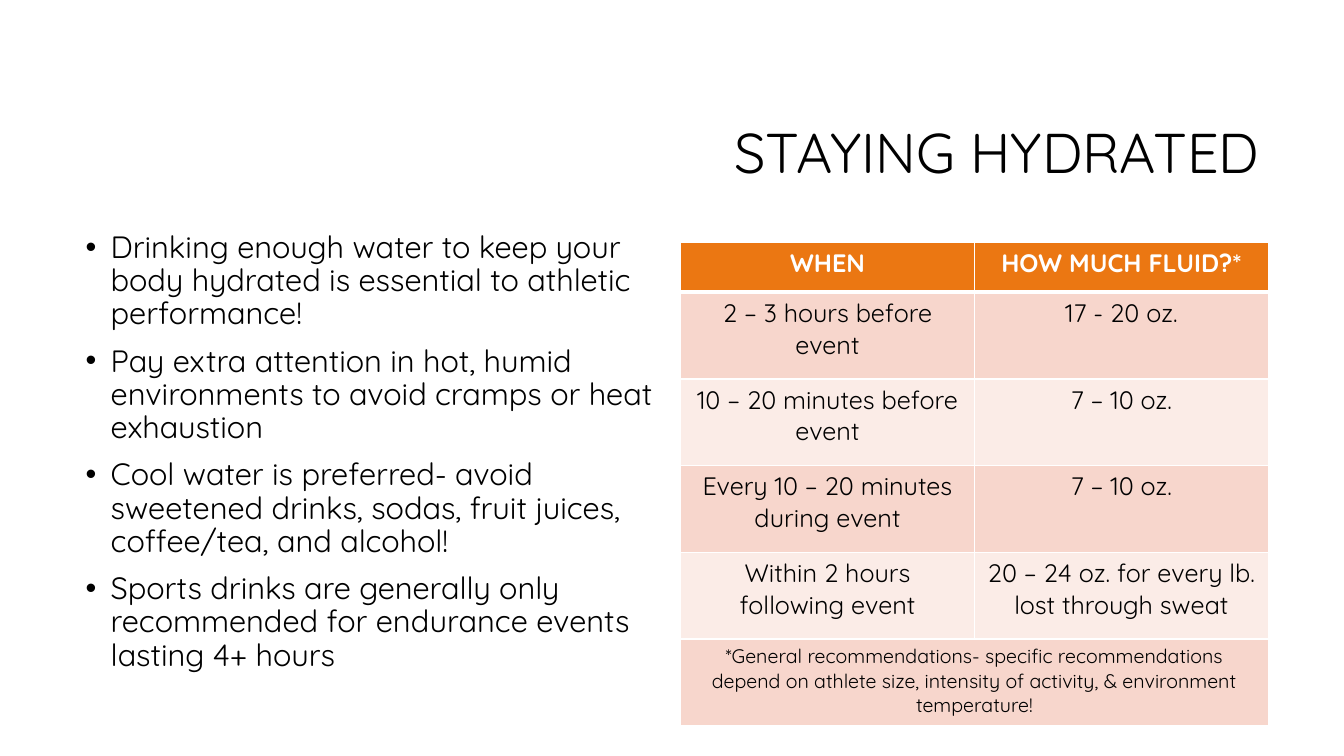
from lxml.etree import SubElement
from pptx import Presentation
from pptx.dml.color import RGBColor
from pptx.enum.text import MSO_ANCHOR, MSO_AUTO_SIZE, PP_ALIGN
from pptx.oxml.ns import qn
from pptx.util import Inches, Pt

BLACK = RGBColor(0x00, 0x00, 0x00)
WHITE = RGBColor(0xFF, 0xFF, 0xFF)
ORANGE = RGBColor(0xEB, 0x77, 0x12)
PEACH = RGBColor(0xF7, 0xD6, 0xCC)
PALE_PEACH = RGBColor(0xFB, 0xEC, 0xE7)

ADVICE = [
    "Drinking enough water to keep your body hydrated is essential to athletic performance!",
    "Pay extra attention in hot, humid environments to avoid cramps or heat exhaustion",
    "Cool water is preferred- avoid sweetened drinks, sodas, fruit juices, coffee/tea, and alcohol!",
    "Sports drinks are generally only recommended for endurance events lasting 4+ hours",
]
FLUID_ROWS = [
    ("WHEN", "HOW MUCH FLUID?*"),
    ("2 – 3 hours before event", "17 - 20 oz."),
    ("10 – 20 minutes before event", "7 – 10 oz."),
    ("Every 10 – 20 minutes during event", "7 – 10 oz."),
    ("Within 2 hours following event", "20 – 24 oz. for every lb. lost through sweat"),
]
FOOTNOTE = (
    "*General recommendations- specific recommendations depend on athlete size, "
    "intensity of activity, & environment temperature!"
)


class SlideBuilder:
    def __init__(self, page, font="Quicksand"):
        self.page = page
        self.font = font

    def style(self, para, size, color=BLACK, bold=False, align=PP_ALIGN.LEFT):
        para.alignment = align
        para.font.name = self.font
        para.font.size = Pt(size)
        para.font.color.rgb = color
        para.font.bold = bold

    def title(self, text, left, top, width, height):
        box = self.page.shapes.title
        box.left, box.top = Inches(left), Inches(top)
        box.width, box.height = Inches(width), Inches(height)
        frame = box.text_frame
        frame.text = text
        frame.auto_size = MSO_AUTO_SIZE.NONE
        frame.vertical_anchor = MSO_ANCHOR.MIDDLE
        para = frame.paragraphs[0]
        para.line_spacing = 0.9
        self.style(para, 40, align=PP_ALIGN.RIGHT)

    def bullets(self, items, left, top, width, height):
        box = self.page.shapes.add_textbox(
            Inches(left), Inches(top), Inches(width), Inches(height))
        frame = box.text_frame
        frame.word_wrap = True
        for index, item in enumerate(items):
            para = frame.paragraphs[0] if index == 0 else frame.add_paragraph()
            para.text = item
            para.line_spacing = 0.9
            para.space_before = Pt(10 if index else 0)
            properties = para._p.get_or_add_pPr()
            properties.set("marL", str(Inches(0.25)))
            properties.set("indent", str(Inches(-0.25)))
            SubElement(properties, qn("a:buFont"), typeface="Arial")
            SubElement(properties, qn("a:buChar"), char="•")
            self.style(para, 22)

    def cell(self, cell, text, fill, size=18, color=BLACK, bold=False):
        cell.text = text
        cell.fill.solid()
        cell.fill.fore_color.rgb = fill
        self.style(cell.text_frame.paragraphs[0], size, color, bold, PP_ALIGN.CENTER)

    def borders(self, cell, top=1, bottom=1):
        """Draw white cell borders; call before the cell is filled."""
        properties = cell._tc.get_or_add_tcPr()
        for side, width in (("L", 1), ("R", 1), ("T", top), ("B", bottom)):
            line = SubElement(properties, qn(f"a:ln{side}"), w=str(Pt(width)))
            fill = SubElement(line, qn("a:solidFill"))
            SubElement(fill, qn("a:srgbClr"), val=str(WHITE))

    def table(self, rows, footnote, left, top, width, header_height, row_height):
        """Add a table with a header, banded rows and a merged footnote row."""
        row_count, column_count = len(rows) + 1, len(rows[0])
        height = header_height + row_height * len(rows)
        table = self.page.shapes.add_table(
            row_count, column_count, Inches(left), Inches(top),
            Inches(width), Inches(height)).table
        table.horz_banding = False
        for index, row in enumerate(table.rows):
            row.height = Inches(row_height if index else header_height)
            for cell in row.cells:
                self.borders(cell, top=3 if index == 1 else 1, bottom=1 if index else 3)

        for column, text in enumerate(rows[0]):
            self.cell(table.cell(0, column), text, ORANGE, color=WHITE, bold=True)
        for index, texts in enumerate(rows[1:], 1):
            for column, text in enumerate(texts):
                band = PEACH if index % 2 else PALE_PEACH
                self.cell(table.cell(index, column), text, band)

        note = table.cell(row_count - 1, 0)
        note.merge(table.cell(row_count - 1, column_count - 1))
        self.cell(note, footnote, PEACH, size=14)


def main():
    deck = Presentation()
    deck.slide_width, deck.slide_height = Inches(13.33), Inches(7.5)
    page = deck.slides.add_slide(deck.slide_layouts[5])
    builder = SlideBuilder(page)
    builder.title("STAYING HYDRATED", 3.17, 0.84, 9.42, 1.41)
    builder.bullets(ADVICE, 0.75, 2.25, 5.83, 4.96)
    builder.table(FLUID_ROWS, FOOTNOTE, 6.75, 2.4, 5.83,
                  header_height=0.5, row_height=0.86)
    deck.save("out.pptx")


if __name__ == "__main__":
    main()
